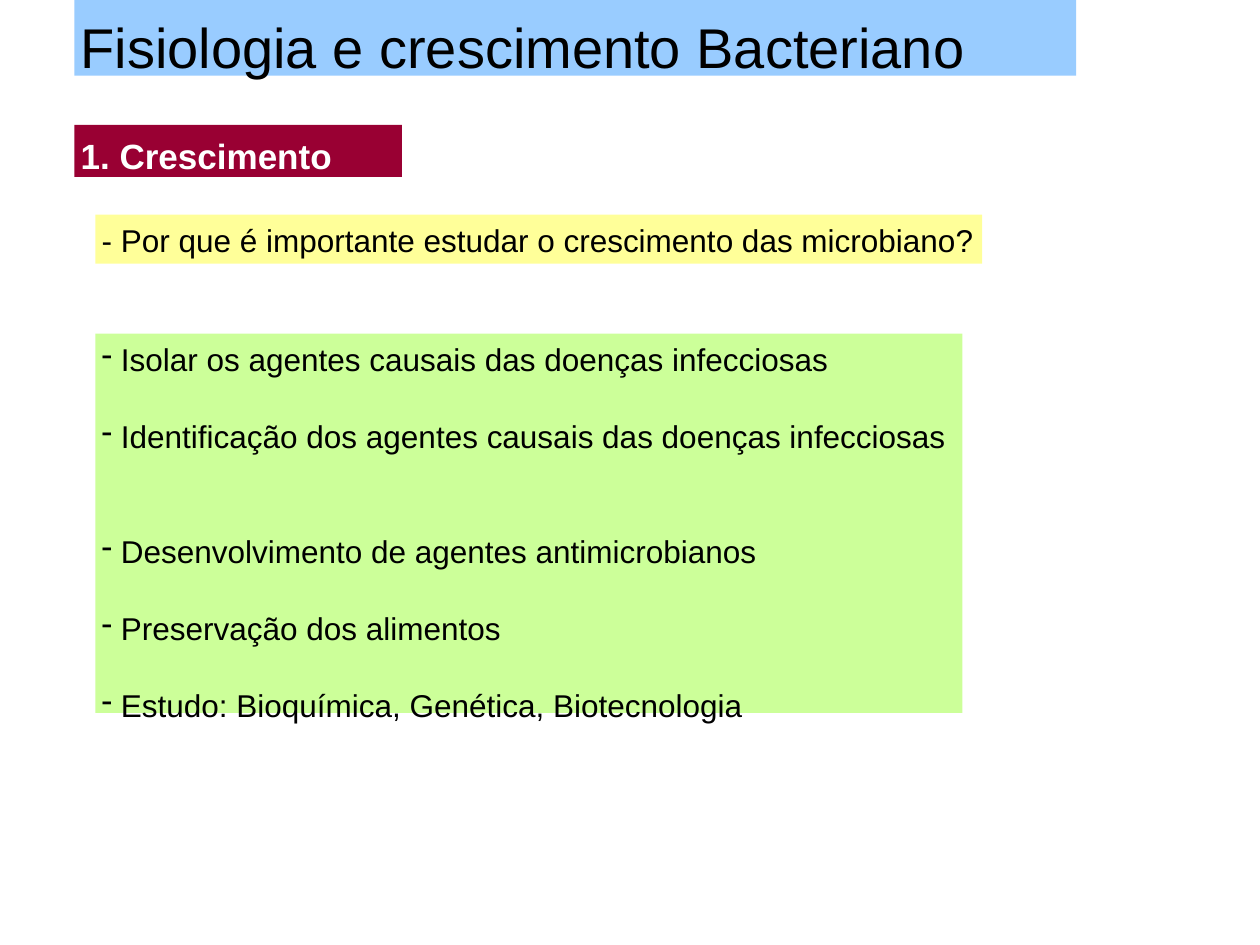
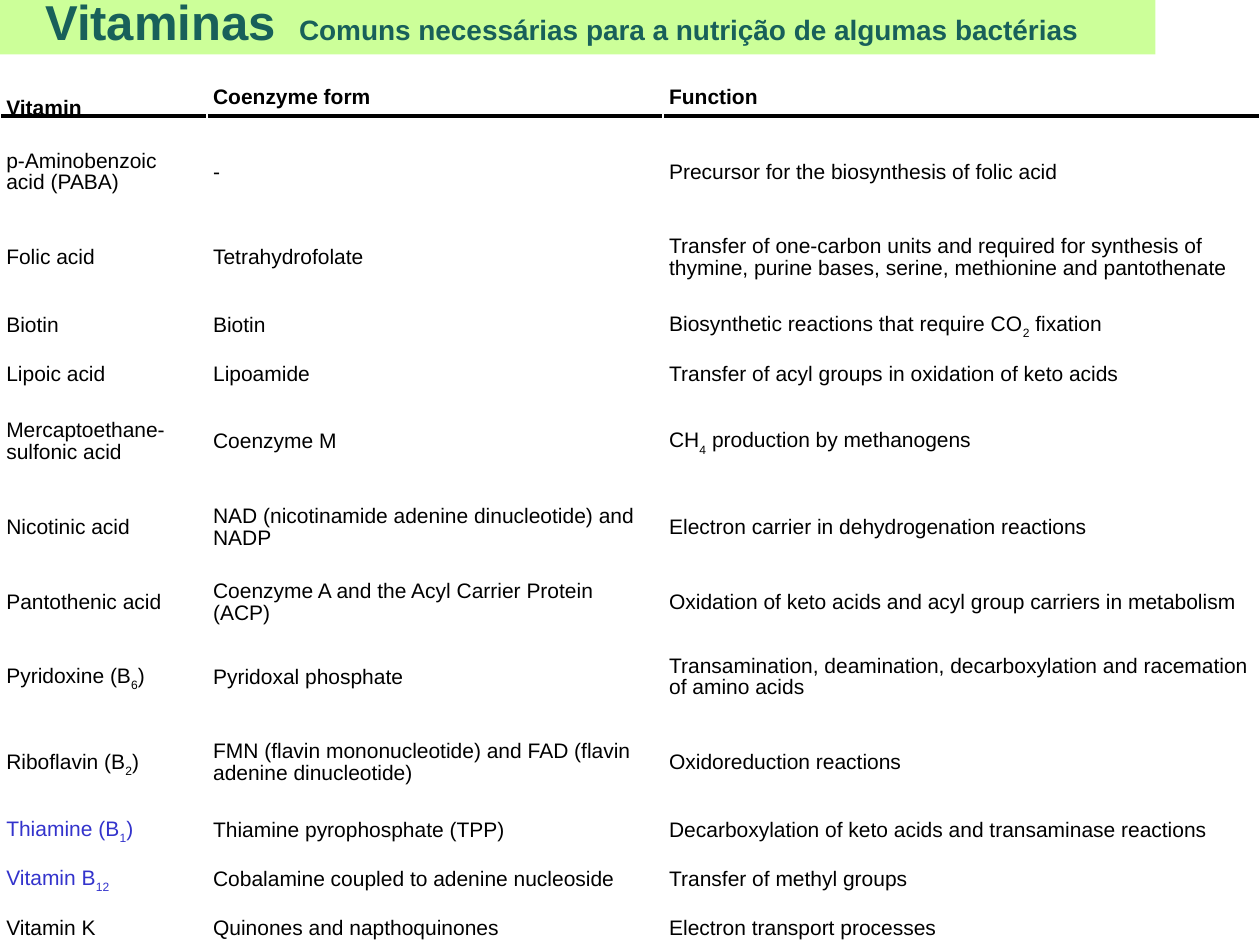
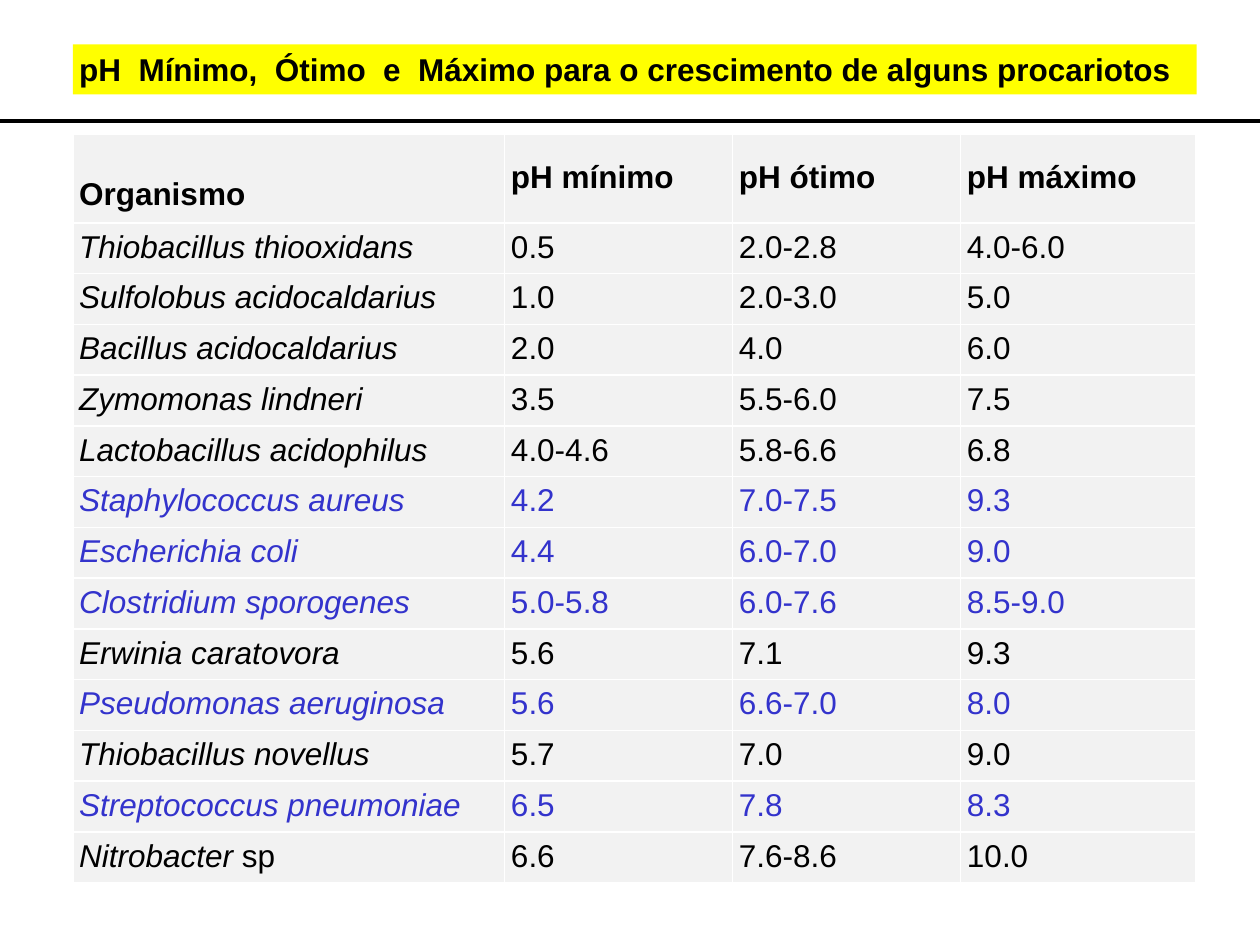
from dataclasses import dataclass

from lxml.etree import SubElement
from pptx import Presentation
from pptx.dml.color import RGBColor
from pptx.enum.shapes import MSO_CONNECTOR
from pptx.enum.text import MSO_ANCHOR, MSO_AUTO_SIZE, PP_ALIGN
from pptx.oxml.ns import qn
from pptx.util import Pt

FONT = "Arial"
BLACK = RGBColor(0x00, 0x00, 0x00)
WHITE = RGBColor(0xFF, 0xFF, 0xFF)
SKY = RGBColor(0x99, 0xCC, 0xFF)
WINE = RGBColor(0x99, 0x00, 0x33)
CREAM = RGBColor(0xFF, 0xFF, 0x99)
LIME = RGBColor(0xCC, 0xFF, 0x99)
YELLOW = RGBColor(0xFF, 0xFF, 0x00)
TEAL = RGBColor(0x18, 0x60, 0x5A)
BLUE = RGBColor(0x33, 0x33, 0xCC)
GREY = RGBColor(0xF2, 0xF2, 0xF2)

SLIDE_W, SLIDE_H = 720, 540
INSET = 3.6
LINE_SPACING = 0.93
LINE_HEIGHT = 1.15  # natural line height of the font, in ems


@dataclass(frozen=True)
class Band:
    """A filled box with one style of text."""
    left: float
    top: float
    width: float
    height: float
    fill: RGBColor
    size: float
    color: RGBColor = BLACK
    bold: bool = False
    anchor: MSO_ANCHOR = MSO_ANCHOR.TOP
    inset_left: float = INSET
    inset_top: float = INSET
    wrap: bool = True


@dataclass(frozen=True)
class TableSpec:
    """Text between tildes is subscript, or upright in an italic column."""
    left: float
    top: float
    widths: tuple[float, ...]
    heights: tuple[float, ...]
    size: float
    rows: tuple[tuple[str, ...], ...]
    blue_names: frozenset[str]
    blue_columns: int
    fill: RGBColor | None = None
    italic_names: bool = False


TITLE_GROWTH = Band(42.5, 0, 572.5, 43.2, SKY, 32, inset_top=7)
SECTION = Band(42.5, 71.3, 187.2, 29.8, WINE, 20, WHITE, True, inset_top=5.6)
QUESTION = Band(54.5, 122.6, 506.7, 28.1, CREAM, 18, wrap=False)
REASONS = Band(54.5, 190.6, 495.4, 216.8, LIME, 18, wrap=False)
TITLE_VITAMINS = Band(0, -7.2, 660.3, 38.3, LIME, 16, TEAL, True,
                      MSO_ANCHOR.MIDDLE, inset_left=25.9)
TITLE_PH = Band(41.6, 25.4, 642.2, 28.5, YELLOW, 18, BLACK, True,
                MSO_ANCHOR.MIDDLE)

GAP, WIDE_GAP = 22.5, 44
REASON_LINES = (
    (0, "Isolar os agentes causais das doenças infecciosas"),
    (GAP, "Identificação dos agentes causais das doenças infecciosas"),
    (WIDE_GAP, "Desenvolvimento de agentes antimicrobianos"),
    (GAP, "Preservação dos alimentos"),
    (GAP, "Estudo: Bioquímica, Genética, Biotecnologia"),
)

SHORT, MEDIUM, TALL = 28, 36.7, 49
VITAMINS = TableSpec(
    left=0, top=37.4, widths=(118.2, 260.6, 341.2),
    heights=(MEDIUM, TALL, TALL, SHORT, SHORT, TALL, TALL, MEDIUM,
             TALL, TALL, SHORT, SHORT, SHORT),
    size=12,
    rows=(
        ("Vitamin", "Coenzyme form", "Function"),
        ("p-Aminobenzoic acid (PABA)", "-",
         "Precursor for the biosynthesis of folic acid"),
        ("Folic acid", "Tetrahydrofolate",
         "Transfer of one-carbon units and required for synthesis of "
         "thymine, purine bases, serine, methionine and pantothenate"),
        ("Biotin", "Biotin",
         "Biosynthetic reactions that require CO~2~ fixation"),
        ("Lipoic acid", "Lipoamide",
         "Transfer of acyl groups in oxidation of keto acids"),
        ("Mercaptoethane-sulfonic acid", "Coenzyme M",
         "CH~4~ production by methanogens"),
        ("Nicotinic acid", "NAD (nicotinamide adenine dinucleotide) and NADP",
         "Electron carrier in dehydrogenation reactions"),
        ("Pantothenic acid", "Coenzyme A and the Acyl Carrier Protein (ACP)",
         "Oxidation of keto acids and acyl group carriers in metabolism"),
        ("Pyridoxine (B~6~)", "Pyridoxal phosphate",
         "Transamination, deamination, decarboxylation and racemation "
         "of amino acids"),
        ("Riboflavin (B~2~)",
         "FMN (flavin mononucleotide) and FAD (flavin adenine dinucleotide)",
         "Oxidoreduction reactions"),
        ("Thiamine (B~1~)", "Thiamine pyrophosphate (TPP)",
         "Decarboxylation of keto acids and transaminase reactions"),
        ("Vitamin B~12~", "Cobalamine coupled to adenine nucleoside",
         "Transfer of methyl groups"),
        ("Vitamin K", "Quinones and napthoquinones",
         "Electron transport processes"),
    ),
    blue_names=frozenset({"Thiamine (B~1~)", "Vitamin B~12~"}),
    blue_columns=1,
)

PH_RANGES = TableSpec(
    left=41.6, top=77, widths=(246.8, 130.3, 130.3, 134.6),
    heights=(50.4,) + (29,) * 13,
    size=18,
    rows=(
        ("Organismo", "pH mínimo", "pH ótimo", "pH máximo"),
        ("Thiobacillus thiooxidans", "0.5", "2.0-2.8", "4.0-6.0"),
        ("Sulfolobus acidocaldarius", "1.0", "2.0-3.0", "5.0"),
        ("Bacillus acidocaldarius", "2.0", "4.0", "6.0"),
        ("Zymomonas lindneri", "3.5", "5.5-6.0", "7.5"),
        ("Lactobacillus acidophilus", "4.0-4.6", "5.8-6.6", "6.8"),
        ("Staphylococcus aureus", "4.2", "7.0-7.5", "9.3"),
        ("Escherichia coli", "4.4", "6.0-7.0", "9.0"),
        ("Clostridium sporogenes", "5.0-5.8", "6.0-7.6", "8.5-9.0"),
        ("Erwinia caratovora", "5.6", "7.1", "9.3"),
        ("Pseudomonas aeruginosa", "5.6", "6.6-7.0", "8.0"),
        ("Thiobacillus novellus", "5.7", "7.0", "9.0"),
        ("Streptococcus pneumoniae", "6.5", "7.8", "8.3"),
        ("Nitrobacter~ sp~", "6.6", "7.6-8.6", "10.0"),
    ),
    blue_names=frozenset({
        "Staphylococcus aureus", "Escherichia coli", "Clostridium sporogenes",
        "Pseudomonas aeruginosa", "Streptococcus pneumoniae"}),
    blue_columns=4,
    fill=GREY,
    italic_names=True,
)


def style_paragraph(p, size: float, color: RGBColor, bold: bool) -> None:
    p.alignment = PP_ALIGN.LEFT
    p.font.name = FONT
    p.font.size = Pt(size)
    p.font.bold = bold
    p.font.color.rgb = color


def format_band(s, band: Band):
    """Place and fill a title or text box; return its text frame."""
    s.left, s.top = Pt(band.left), Pt(band.top)
    s.width, s.height = Pt(band.width), Pt(band.height)
    s.fill.solid()
    s.fill.fore_color.rgb = band.fill
    tf = s.text_frame
    tf.auto_size = MSO_AUTO_SIZE.NONE
    tf.word_wrap = band.wrap
    tf.vertical_anchor = band.anchor
    tf.margin_left, tf.margin_top = Pt(band.inset_left), Pt(band.inset_top)
    tf.margin_right = tf.margin_bottom = Pt(INSET)
    style_paragraph(tf.paragraphs[0], band.size, band.color, band.bold)
    return tf


def add_titled_slide(prs, band: Band):
    """Return a new slide and the first paragraph of its title."""
    slide = prs.slides.add_slide(prs.slide_layouts[5])
    return slide, format_band(slide.shapes.title, band).paragraphs[0]


def add_band(slide, band: Band):
    return format_band(slide.shapes.add_textbox(0, 0, 0, 0), band)


def add_rule(slide, y: float) -> None:
    line = slide.shapes.add_connector(
        MSO_CONNECTOR.STRAIGHT, 0, Pt(y), Pt(SLIDE_W), Pt(y))
    line.line.color.rgb = BLACK
    line.line.width = Pt(2.25)
    SubElement(line._element.spPr, qn("a:effectLst"))


def set_dash_bullet(p, indent: float) -> None:
    pPr = p._p.get_or_add_pPr()
    pPr.set("marL", str(Pt(indent)))
    pPr.set("indent", str(-Pt(indent)))
    bullet = pPr.makeelement(qn("a:buChar"), {"char": "-"})
    pPr.find(qn("a:defRPr")).addprevious(bullet)


def set_tab_stop(p, position: float) -> None:
    pPr = p._p.get_or_add_pPr()
    tabs = pPr.makeelement(qn("a:tabLst"), {})
    SubElement(tabs, qn("a:tab"), pos=str(Pt(position)), algn="l")
    pPr.find(qn("a:defRPr")).addprevious(tabs)


def fill_cell(cell, text: str, spec: TableSpec, row: int, col: int) -> None:
    header = row == 0
    italic = spec.italic_names and col == 0 and not header
    blue = spec.rows[row][0] in spec.blue_names and col < spec.blue_columns
    if spec.fill is None:
        cell.fill.background()
    else:
        cell.fill.solid()
        cell.fill.fore_color.rgb = spec.fill
    cell.vertical_anchor = MSO_ANCHOR.MIDDLE
    cell.margin_left = cell.margin_right = Pt(INSET)
    cell.margin_top = cell.margin_bottom = Pt(INSET)
    if header and col == 0:
        # The first heading sits half a line lower than the others.
        cell.margin_top = Pt(INSET + spec.size * LINE_HEIGHT * LINE_SPACING)
    p = cell.text_frame.paragraphs[0]
    style_paragraph(p, spec.size, BLUE if blue else BLACK, header)
    p.line_spacing = LINE_SPACING
    p.font.italic = italic
    for i, part in enumerate(text.split("~")):
        if not part:
            continue
        r = p.add_run()
        r.text = part
        if i % 2 and italic:
            r.font.italic = False
        elif i % 2:
            r._r.get_or_add_rPr().set("baseline", "-30000")


def draw_table(slide, spec: TableSpec) -> None:
    table = slide.shapes.add_table(
        len(spec.heights), len(spec.widths), Pt(spec.left), Pt(spec.top),
        Pt(sum(spec.widths)), Pt(sum(spec.heights))).table
    table.first_row = table.horz_banding = False
    for column, width in zip(table.columns, spec.widths):
        column.width = Pt(width)
    for i, (texts, height) in enumerate(zip(spec.rows, spec.heights)):
        table.rows[i].height = Pt(height)
        for j, text in enumerate(texts):
            fill_cell(table.cell(i, j), text, spec, i, j)


def build_growth_slide(prs) -> None:
    slide, title = add_titled_slide(prs, TITLE_GROWTH)
    title.add_run().text = "Fisiologia e crescimento Bacteriano"
    for band, text in (
        (QUESTION,
         "- Por que é importante estudar o crescimento das microbiano?"),
        (SECTION, "1. Crescimento"),
    ):
        add_band(slide, band).paragraphs[0].add_run().text = text
    tf = add_band(slide, REASONS)
    for i, (gap, text) in enumerate(REASON_LINES):
        p = tf.add_paragraph() if i else tf.paragraphs[0]
        style_paragraph(p, REASONS.size, REASONS.color, REASONS.bold)
        p.space_before = Pt(gap)
        set_dash_bullet(p, 11)
        p.add_run().text = text


def build_vitamin_slide(prs) -> None:
    slide, title = add_titled_slide(prs, TITLE_VITAMINS)
    set_tab_stop(title, 145)
    r = title.add_run()
    r.text = "Vitaminas"
    r.font.size = Pt(28)
    title.add_run().text = "\tComuns necessárias para a nutrição de algumas bactérias"
    add_rule(slide, 66.3)
    draw_table(slide, VITAMINS)


def build_ph_slide(prs) -> None:
    slide, title = add_titled_slide(prs, TITLE_PH)
    title.add_run().text = (
        "pH  Mínimo,  Ótimo  e  Máximo para o crescimento de alguns procariotos")
    add_rule(slide, 69.1)
    draw_table(slide, PH_RANGES)


def main() -> None:
    prs = Presentation()
    prs.slide_width, prs.slide_height = Pt(SLIDE_W), Pt(SLIDE_H)
    build_growth_slide(prs)
    build_vitamin_slide(prs)
    build_ph_slide(prs)
    prs.save("out.pptx")


if __name__ == "__main__":
    main()
